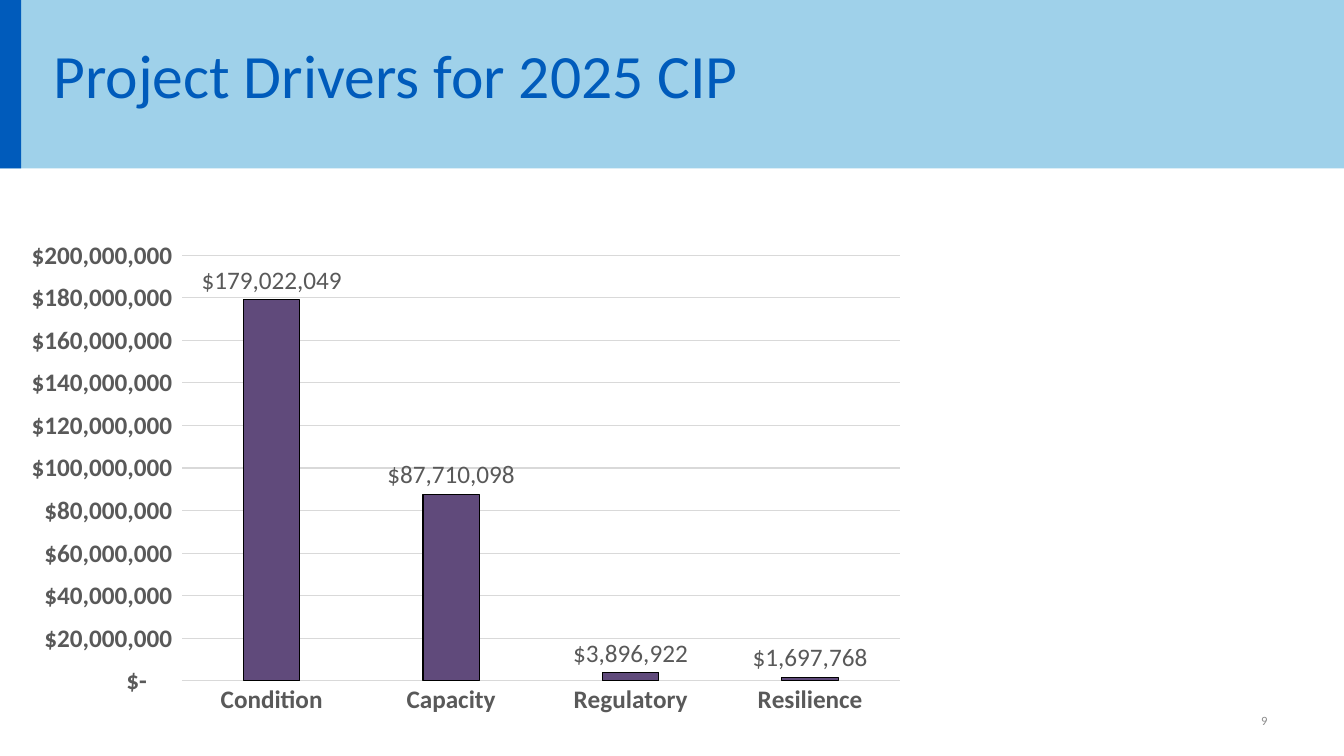
from lxml.etree import SubElement
from pptx import Presentation
from pptx.chart.data import CategoryChartData
from pptx.dml.color import RGBColor
from pptx.enum.chart import XL_CHART_TYPE, XL_LABEL_POSITION, XL_TICK_MARK
from pptx.enum.shapes import MSO_SHAPE
from pptx.enum.text import MSO_ANCHOR, PP_ALIGN
from pptx.oxml import parse_xml
from pptx.oxml.ns import nsdecls, qn
from pptx.util import Inches, Pt

# Content
TITLE = "Project Drivers for 2025 CIP"
PAGE = "9"
DRIVERS = {
    "Condition": 179022049,
    "Capacity": 87710098,
    "Regulatory": 3896922,
    "Resilience": 1697768,
}
DOLLARS = '_("$"* #,##0_);_("$"* \\(#,##0\\);_("$"* "-"??_);_(@_)'
PLOT = {"x": 0.183, "y": 0.125, "w": 0.817, "h": 0.795}

THEME = {
    "font": "Calibri",
    "band": "8FCAE7", "blue": "005BBB", "bar": "604A7B", "outline": "000000",
    "text": "595959", "grid": "D9D9D9", "page": "8C8C8C",
    "title_size": 44, "chart_size": 18, "page_size": 9, "line": 0.75,
}


def color(name):
    return RGBColor.from_string(THEME[name])


def set_font(font, size, name, bold=False):
    font.name, font.size, font.bold = THEME["font"], Pt(THEME[size]), bold
    font.color.rgb = color(name)


def set_line(line, name):
    line.color.rgb = color(name)
    line.width = Pt(THEME["line"])


def add_rect(s, box, name):
    sp = s.shapes.add_shape(MSO_SHAPE.RECTANGLE, *map(Inches, box))
    sp.shadow.inherit = False
    sp.fill.solid()
    sp.fill.fore_color.rgb = color(name)
    sp.line.fill.background()
    return sp


def add_text(s, box, text, size, name, align=PP_ALIGN.LEFT, anchor=MSO_ANCHOR.TOP):
    tf = s.shapes.add_textbox(*map(Inches, box)).text_frame
    tf.word_wrap, tf.vertical_anchor = True, anchor
    p = tf.paragraphs[0]
    p.text, p.alignment = text, align
    set_font(p.font, size, name)


def add_driver_chart(s, box):
    data = CategoryChartData(number_format=DOLLARS)
    data.categories = list(DRIVERS)
    data.add_series("Series 1", list(DRIVERS.values()))
    chart = s.shapes.add_chart(
        XL_CHART_TYPE.COLUMN_CLUSTERED, *map(Inches, box), data).chart
    chart.has_legend = chart.has_title = False
    set_font(chart.font, "chart_size", "text")

    # Axes
    cat, val = chart.category_axis, chart.value_axis
    for axis in (cat, val):
        axis.major_tick_mark = axis.minor_tick_mark = XL_TICK_MARK.NONE
        set_font(axis.tick_labels.font, "chart_size", "text", True)
    set_line(cat.format.line, "grid")
    val.format.line.fill.background()
    val.minimum_scale, val.maximum_scale, val.major_unit = 0, 200000000, 20000000
    val.has_major_gridlines = True
    set_line(val.major_gridlines.format.line, "grid")
    val.tick_labels.number_format = DOLLARS
    val.tick_labels.number_format_is_linked = False

    # Columns and their labels
    plot = chart.plots[0]
    plot.gap_width, plot.overlap, plot.vary_by_categories = 219, -27, False
    series = plot.series[0]
    series.format.fill.solid()
    series.format.fill.fore_color.rgb = color("bar")
    set_line(series.format.line, "outline")
    labels = series.data_labels
    labels.show_value = True
    labels.position = XL_LABEL_POSITION.OUTSIDE_END
    labels.number_format, labels.number_format_is_linked = DOLLARS, False
    set_font(labels.font, "chart_size", "text")

    # Fixed inner plot area
    area = chart.element.find(".//" + qn("c:plotArea"))
    for old in area.findall(qn("c:layout")):
        area.remove(old)
    modes = '<c:layoutTarget val="inner"/><c:xMode val="edge"/><c:yMode val="edge"/>'
    sides = "".join(f'<c:{k} val="{v}"/>' for k, v in PLOT.items())
    area.insert(0, parse_xml(
        f'<c:layout {nsdecls("c")}><c:manualLayout>{modes}{sides}'
        '</c:manualLayout></c:layout>'))


def main():
    prs = Presentation()
    prs.slide_width, prs.slide_height = Inches(13.33), Inches(7.5)
    s = prs.slides.add_slide(prs.slide_layouts[6])

    # Header band, 85% opaque, with its accent
    band = add_rect(s, (0, 0, 13.33, 1.67), "band")
    rgb = band.fill._xPr.find(".//" + qn("a:srgbClr"))
    SubElement(rgb, qn("a:alpha")).set("val", "85000")
    add_rect(s, (0, 0, 0.21, 1.67), "blue")

    # Title, page number and chart
    add_text(s, (0.43, 0.32, 9.56, 0.85), TITLE, "title_size", "blue")
    add_text(s, (9.56, 6.95, 3.11, 0.4), PAGE, "page_size", "page",
             PP_ALIGN.RIGHT, MSO_ANCHOR.MIDDLE)
    add_driver_chart(s, (0.21, 1.87, 8.72, 5.31))
    prs.save("out.pptx")


if __name__ == "__main__":
    main()
